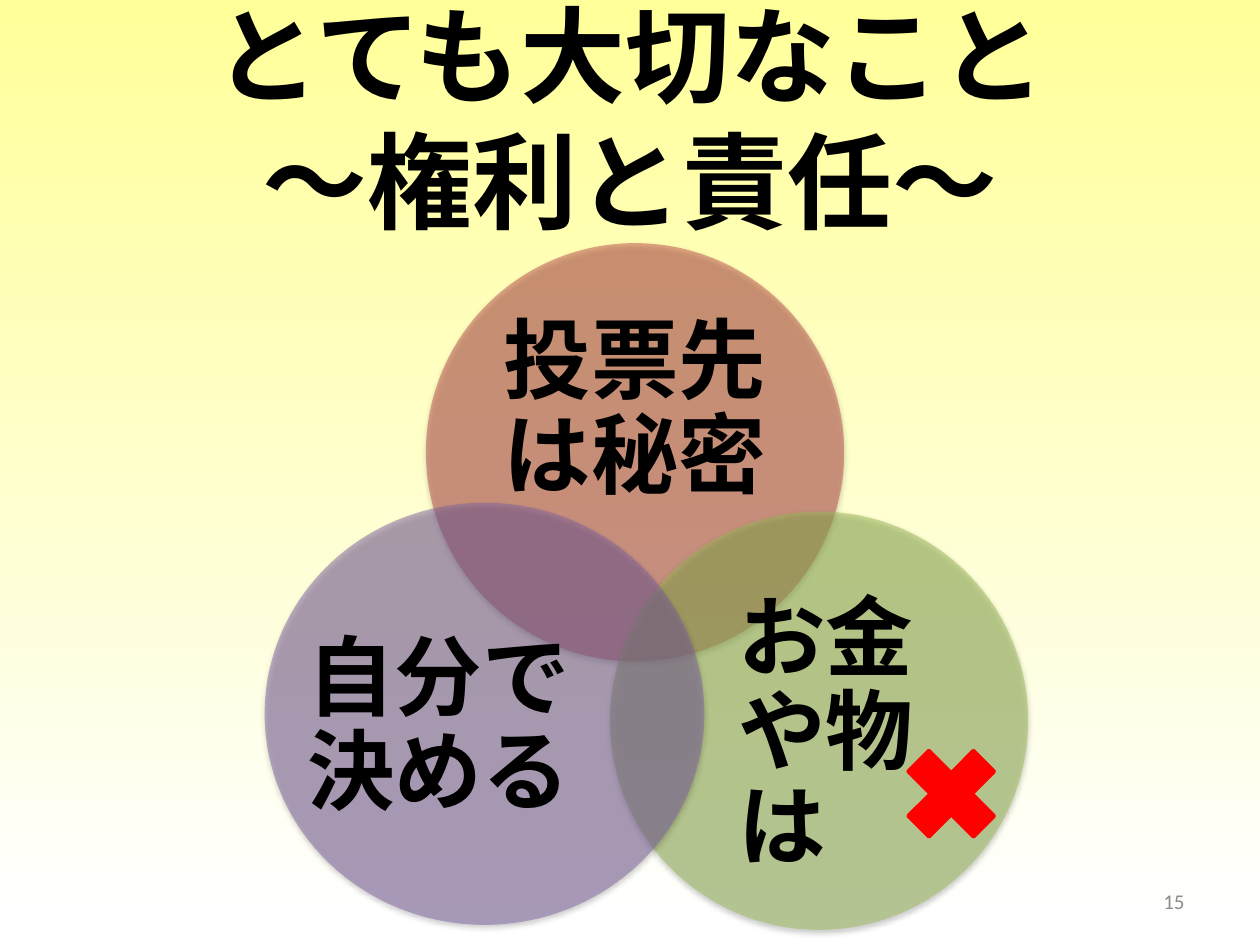
from dataclasses import dataclass

from lxml import etree
from pptx import Presentation
from pptx.dml.color import RGBColor
from pptx.enum.shapes import MSO_SHAPE
from pptx.enum.text import MSO_ANCHOR, MSO_AUTO_SIZE, PP_ALIGN
from pptx.oxml.ns import qn
from pptx.util import Inches, Pt


@dataclass(frozen=True)
class Theme:
    heading_font: str = "Noto Sans CJK JP"
    number_font: str = "Calibri"
    title_size: int = 60
    circle_size: int = 50
    number_size: int = 12
    ink: str = "000000"
    muted: str = "8C8C8C"
    sky: str = "FFFF99"
    ground: str = "FFFFFF"
    secret: str = "C0504D"
    money: str = "9BBB59"
    decide: str = "8064A2"
    cross: str = "FF0000"


THEME = Theme()


def rgb(value):
    return RGBColor.from_string(value)


def box_inches(box):
    return [Inches(length) for length in box]


def add_run(paragraph, text, size, color, font_name, bold=False):
    run = paragraph.add_run()
    run.text = text
    font = run.font
    font.size, font.bold, font.name = Pt(size), bold, font_name
    font.color.rgb = rgb(color)
    east_asian = etree.SubElement(run._r.get_or_add_rPr(), qn("a:ea"))
    east_asian.set("typeface", font_name)


def add_text_frame(slide, box, margin=None):
    frame = slide.shapes.add_textbox(*box_inches(box)).text_frame
    frame.word_wrap = True
    frame.vertical_anchor = MSO_ANCHOR.MIDDLE
    if margin is not None:
        frame.margin_left = frame.margin_right = Inches(margin)
        frame.margin_top = frame.margin_bottom = Inches(margin)
    return frame


def add_soft_shadow(shape):
    shape.shadow.inherit = False
    effects = shape._element.spPr.find(qn("a:effectLst"))
    shadow = etree.SubElement(
        effects, qn("a:outerShdw"), blurRad=str(Pt(3.1)), dist=str(Pt(1.6)),
        dir="5400000", rotWithShape="0")
    color = etree.SubElement(shadow, qn("a:srgbClr"), val=THEME.ink)
    etree.SubElement(color, qn("a:alpha"), val="38000")


def paint_background(slide):
    fill = slide.background.fill
    fill.gradient()
    fill.gradient_angle = 270
    stops = ((0, THEME.sky), (0.98, THEME.ground))
    for stop, (position, color) in zip(fill.gradient_stops, stops):
        stop.position = position
        stop.color.rgb = rgb(color)


def place_title(slide, box, lines):
    title = slide.shapes.title
    title.left, title.top, title.width, title.height = box_inches(box)
    frame = title.text_frame
    frame.auto_size = MSO_AUTO_SIZE.NONE
    frame.vertical_anchor = MSO_ANCHOR.MIDDLE
    paragraph = frame.paragraphs[0]
    paragraph.alignment = PP_ALIGN.CENTER
    for index, line in enumerate(lines):
        if index:
            paragraph.add_line_break()
        add_run(paragraph, line, THEME.title_size, THEME.ink,
                THEME.heading_font, bold=True)


def place_circle(slide, box, color, label, label_box, alignment):
    """Draw a translucent circle; label_box is relative to its corner."""
    circle = slide.shapes.add_shape(MSO_SHAPE.OVAL, *box_inches(box))
    circle.fill.solid()
    circle.fill.fore_color.rgb = rgb(color)
    color_node = circle._element.spPr.find(qn("a:solidFill"))[0]
    etree.SubElement(color_node, qn("a:alpha"), val="50000")
    circle.line.fill.background()
    add_soft_shadow(circle)

    dx, dy, width, height = label_box
    frame = add_text_frame(
        slide, (box[0] + dx, box[1] + dy, width, height), margin=0)
    paragraph = frame.paragraphs[0]
    paragraph.alignment = alignment
    paragraph.line_spacing = 0.9
    add_run(paragraph, label, THEME.circle_size, THEME.ink,
            THEME.heading_font, bold=True)


def place_venn(slide, box):
    left, top = box[:2]
    circles = (
        ((1.28, 0, 3.32, 3.32), THEME.secret, "投票先は秘密",
         (0.44, 0.59, 2.44, 1.49), PP_ALIGN.CENTER),
        ((2.74, 2.13, 3.32, 3.32), THEME.money, "お金や物は",
         (1.02, 0.86, 1.99, 1.83), PP_ALIGN.LEFT),
        ((0, 2.06, 3.49, 3.35), THEME.decide, "自分で決める",
         (0.33, 0.87, 2.1, 1.84), PP_ALIGN.CENTER),
    )
    for (dx, dy, width, height), *details in circles:
        place_circle(slide, (left + dx, top + dy, width, height), *details)

    # Cross that forbids money and goods
    cross = slide.shapes.add_shape(
        MSO_SHAPE.MATH_MULTIPLY, *box_inches((left + 4.95, top + 3.87, 1, 1)))
    cross.shadow.inherit = False
    cross.fill.solid()
    cross.fill.fore_color.rgb = rgb(THEME.cross)
    cross.line.color.rgb = rgb(THEME.cross)
    cross.line.width = Pt(2)


def place_page_number(slide, box, number):
    paragraph = add_text_frame(slide, box).paragraphs[0]
    paragraph.alignment = PP_ALIGN.RIGHT
    add_run(paragraph, number, THEME.number_size, THEME.muted,
            THEME.number_font)


def main():
    deck = Presentation()
    deck.slide_width, deck.slide_height = Inches(10), Inches(7.5)
    title_only = deck.slide_layouts[5]
    slide = deck.slides.add_slide(title_only)

    paint_background(slide)
    place_page_number(slide, (7.17, 6.95, 2.33, 0.4), "15")
    place_title(slide, (0.5, 0.3, 9, 1.25),
                ("とても大切なこと", "～権利と責任～"))
    place_venn(slide, (2.1, 1.93, 6.06, 5.45))
    deck.save("out.pptx")


if __name__ == "__main__":
    main()
